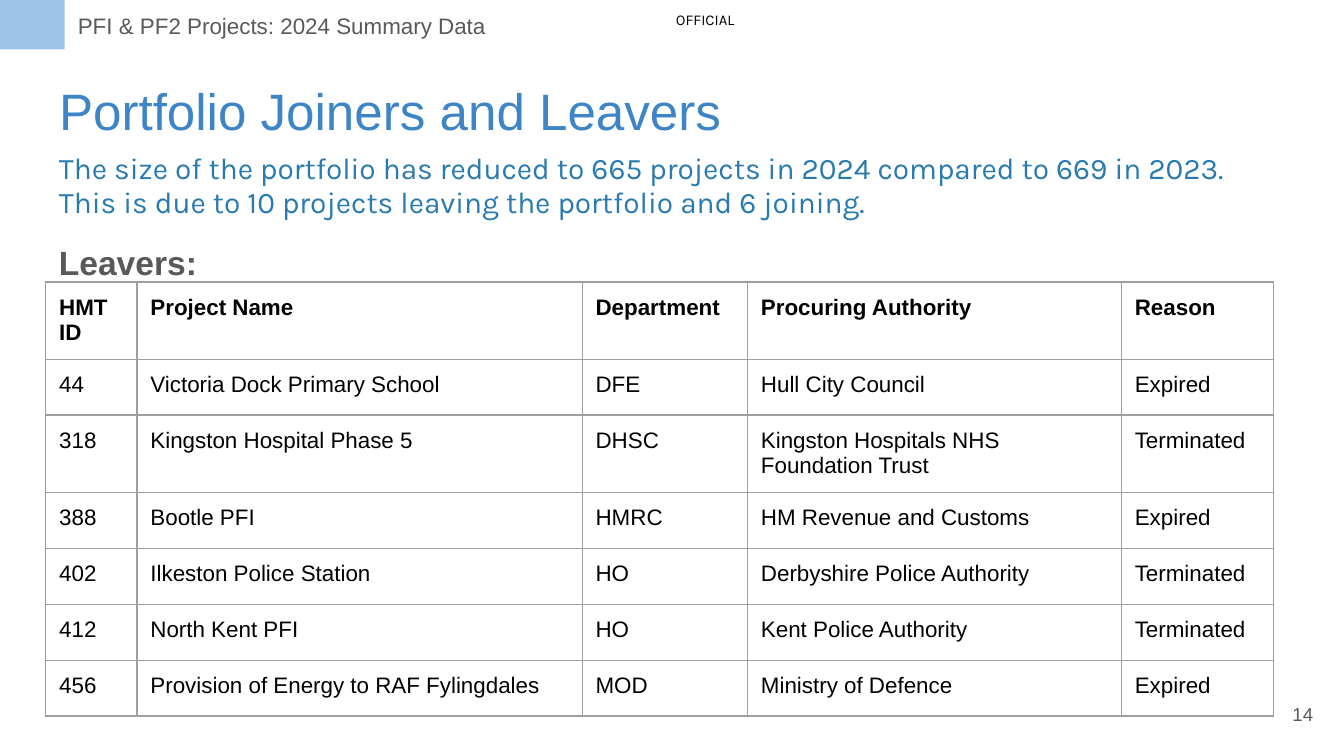
from lxml.etree import SubElement
from pptx import Presentation
from pptx.dml.color import RGBColor
from pptx.enum.shapes import MSO_SHAPE as Preset
from pptx.enum.text import MSO_ANCHOR as Anchor, MSO_AUTO_SIZE as AutoSize, PP_ALIGN as Align
from pptx.oxml.ns import qn
from pptx.util import Pt

TITLE = "Portfolio Joiners and Leavers"
SUMMARY = (
    "The size of the portfolio has reduced to 665 projects in 2024 compared to 669 in 2023. "
    "This is due to 10 projects leaving the portfolio and 6 joining."
)
TEXTS = [
    ("14", (667.4, 367.2, 43.2, 31), dict(size=10, color="595959", align=Align.RIGHT, anchor=Anchor.MIDDLE)),
    ("PFI & PF2 Projects: 2024 Summary Data", (34.6, -0.7, 265.7, 26.6), dict(size=12, color="595959")),
    (SUMMARY, (24.5, 74.2, 671, 51.1), dict(size=16, color="287AAF", font="Karla", spacing=0.95, after=12)),
    ("Leavers:", (24.5, 122.4, 177.1, 27.4), dict(size=18, color="595959", bold=True)),
    ("OFFICIAL", (355, -1.4, 56.9, 14.4), dict(size=8, color="000000", font="Karla")),
]
LEAVERS = [
    ("HMT ID", "Project Name", "Department", "Procuring Authority", "Reason"),
    ("44", "Victoria Dock Primary School", "DFE", "Hull City Council", "Expired"),
    ("318", "Kingston Hospital Phase 5", "DHSC", "Kingston Hospitals NHS Foundation Trust", "Terminated"),
    ("388", "Bootle PFI", "HMRC", "HM Revenue and Customs", "Expired"),
    ("402", "Ilkeston Police Station", "HO", "Derbyshire Police Authority", "Terminated"),
    ("412", "North Kent PFI", "HO", "Kent Police Authority", "Terminated"),
    ("456", "Provision of Energy to RAF Fylingdales", "MOD", "Ministry of Defence", "Expired"),
]
COLUMN_WIDTHS = [48.9, 238.5, 88.6, 200.3, 81.6]
ROW_HEIGHT = 30
TABLE_LEFT, TABLE_TOP = 24.5, 151.1
INSET = Pt(7.2)


def rgb(value):
    return RGBColor.from_string(value)


def points(box):
    return [Pt(length) for length in box]


def style_text(frame, text, size, color, font="Arial", bold=False, align=Align.LEFT, spacing=1.0, after=0):
    frame.text = text
    paragraph = frame.paragraphs[0]
    paragraph.alignment = align
    paragraph.line_spacing = spacing
    paragraph.space_after = Pt(after)
    run_font = paragraph.runs[0].font
    run_font.name, run_font.size, run_font.bold = font, Pt(size), bold
    run_font.color.rgb = rgb(color)


def fill_frame(shape, text, anchor=Anchor.TOP, **style):
    frame = shape.text_frame
    frame.word_wrap = True
    frame.auto_size = AutoSize.NONE
    frame.vertical_anchor = anchor
    frame.margin_left = frame.margin_right = frame.margin_top = frame.margin_bottom = INSET
    style_text(frame, text, **style)


def add_borders(cell, color, width):
    properties = cell._tc.get_or_add_tcPr()
    for side in ("a:lnL", "a:lnR", "a:lnT", "a:lnB"):
        line = SubElement(properties, qn(side), w=str(Pt(width)))
        SubElement(SubElement(line, qn("a:solidFill")), qn("a:srgbClr"), val=color)


def add_leavers_table(slide):
    box = (TABLE_LEFT, TABLE_TOP, sum(COLUMN_WIDTHS), ROW_HEIGHT * len(LEAVERS))
    table = slide.shapes.add_table(len(LEAVERS), len(COLUMN_WIDTHS), *points(box)).table
    table.first_row = table.horz_banding = False
    for column, width in zip(table.columns, COLUMN_WIDTHS):
        column.width = Pt(width)
    for row_index, values in enumerate(LEAVERS):
        for column_index, value in enumerate(values):
            cell = table.cell(row_index, column_index)
            cell.margin_left = cell.margin_right = cell.margin_top = cell.margin_bottom = INSET
            add_borders(cell, "9E9E9E", 0.75)
            cell.fill.background()
            style_text(cell.text_frame, value, 12, "000000", bold=row_index == 0)


def main():
    """Build the portfolio joiners and leavers slide."""
    presentation = Presentation()
    presentation.slide_width, presentation.slide_height = Pt(720), Pt(405)
    slide = presentation.slides.add_slide(presentation.slide_layouts[5])

    title = slide.shapes.title
    title.left, title.top, title.width, title.height = points((24.5, 35.3, 671, 45.4))
    fill_frame(title, TITLE, size=27.4, color="3D85C6")

    header_block = slide.shapes.add_shape(Preset.RECTANGLE, *points((-0.7, -0.7, 35.3, 27.2)))
    header_block.shadow.inherit = False
    header_block.fill.solid()
    header_block.fill.fore_color.rgb = rgb("9FC5E8")
    header_block.line.fill.background()

    add_leavers_table(slide)
    for text, box, style in TEXTS:
        fill_frame(slide.shapes.add_textbox(*points(box)), text, **style)
    presentation.save("out.pptx")


if __name__ == "__main__":
    main()
